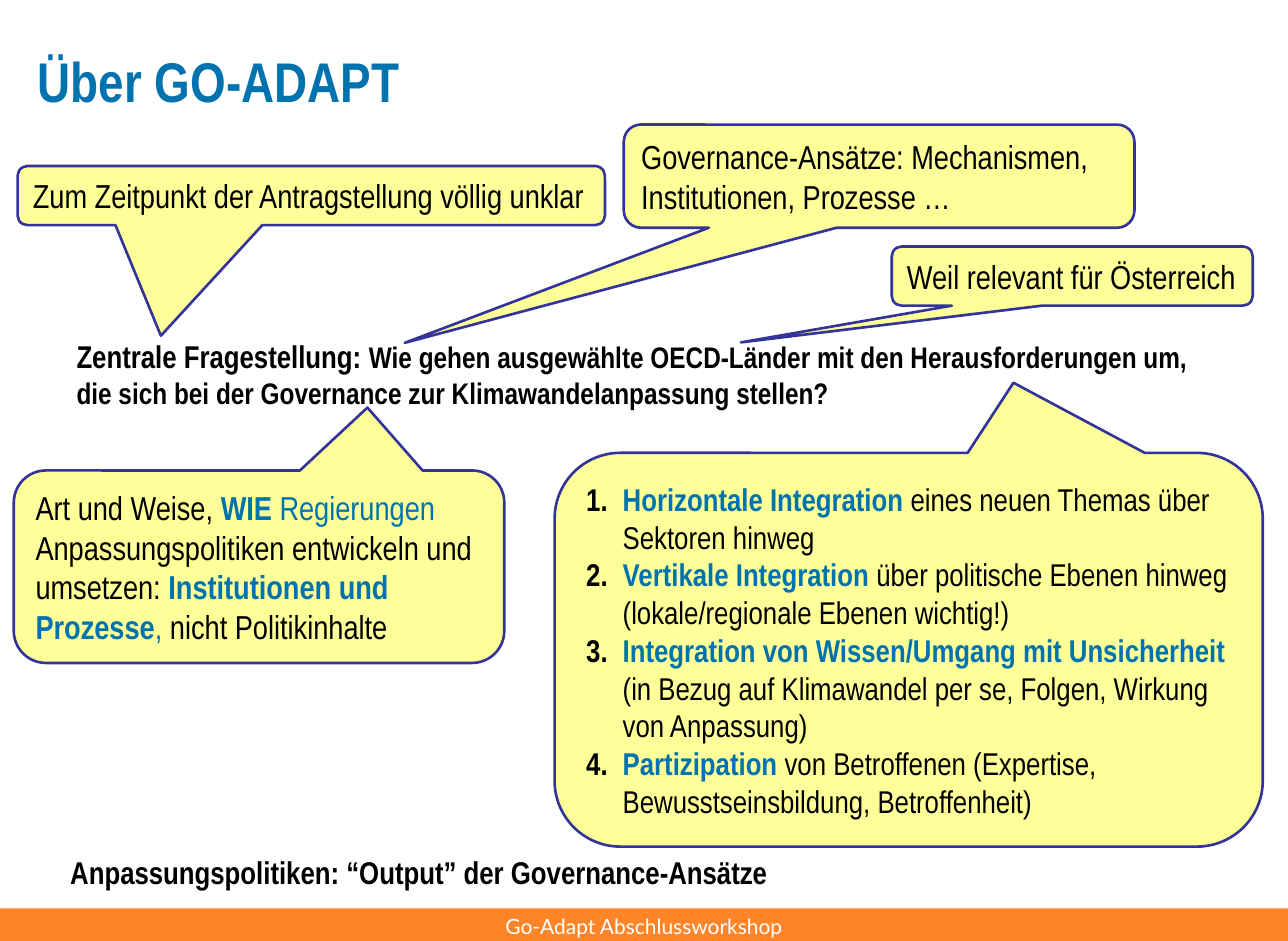
import lxml.etree
import pptx
import pptx.dml.color
import pptx.enum.shapes
import pptx.enum.text
import pptx.oxml.ns
import pptx.util

Inches = pptx.util.Inches
RGBColor = pptx.dml.color.RGBColor
SHAPE = pptx.enum.shapes.MSO_SHAPE
ALIGN = pptx.enum.text.PP_ALIGN
ANCHOR = pptx.enum.text.MSO_ANCHOR

BLUE = RGBColor(0x00, 0x73, 0xAF)
ORANGE = RGBColor(0xFF, 0x85, 0x28)
YELLOW = RGBColor(0xFF, 0xFF, 0x99)
INDIGO = RGBColor(0x33, 0x33, 0x99)
BLACK = RGBColor(0, 0, 0)
WHITE = RGBColor(0xFF, 0xFF, 0xFF)
NARROW = "Arial Narrow"

PLAIN = (BLACK, False)
STRONG = (BLUE, True)
ACCENT = (BLUE, False)

CALLOUTS = [
    ((0.14, 1.32, 4.67, 0.47), (-0.256, 2.37), False,
     [("Zum Zeitpunkt der Antragstellung völlig unklar", PLAIN)]),
    ((0.11, 3.74, 3.9, 1.53), (0.221, -0.827), True,
     [("Art und Weise, ", PLAIN), ("WIE ", STRONG), ("Regierungen ", ACCENT),
      ("Anpassungspolitiken entwickeln und umsetzen: ", PLAIN),
      ("Institutionen und Prozesse", STRONG), (", ", ACCENT),
      ("nicht Politikinhalte", PLAIN)]),
    ((7.09, 1.96, 2.87, 0.47), (-0.918, 1.122), False,
     [("Weil relevant für Österreich", PLAIN)]),
    ((4.96, 0.99, 4.06, 0.82), (-0.929, 1.616), True,
     [("Governance-Ansätze: Mechanismen, Institutionen, Prozesse …", PLAIN)]),
]

CHALLENGES = [
    ("Horizontale Integration ", "eines neuen Themas über Sektoren hinweg"),
    ("Vertikale Integration ",
     "über politische Ebenen hinweg (lokale/regionale Ebenen wichtig!)"),
    ("Integration von Wissen/Umgang mit Unsicherheit ",
     "(in Bezug auf Klimawandel per se, Folgen, Wirkung von Anpassung)"),
    ("Partizipation ", "von Betroffenen (Expertise, Bewusstseinsbildung, Betroffenheit)"),
]


def set_font(font, size, color=None, bold=None, name=NARROW):
    """Set the typeface, size, colour and weight of a font."""
    font.name = name
    font.size = pptx.util.Pt(size)
    if color is not None:
        font.color.rgb = color
    if bold is not None:
        font.bold = bold


def add_runs(paragraph, pieces, size):
    """Fill a left-aligned paragraph with runs of differing colour and weight."""
    paragraph.alignment = ALIGN.LEFT
    set_font(paragraph.font, size)
    for text, (color, bold) in pieces:
        run = paragraph.add_run()
        run.text = text
        run.font.color.rgb = color
        run.font.bold = bold


def number_paragraph(paragraph):
    """Give a paragraph a hanging automatic number."""
    properties = paragraph._p.get_or_add_pPr()
    indent = Inches(0.29)
    properties.set("marL", str(indent))
    properties.set("indent", str(-indent))
    color = lxml.etree.SubElement(properties, pptx.oxml.ns.qn("a:buClr"))
    lxml.etree.SubElement(color, pptx.oxml.ns.qn("a:srgbClr"), val=str(BLACK))
    lxml.etree.SubElement(properties, pptx.oxml.ns.qn("a:buAutoNum"), type="arabicPeriod")


def add_title(slide, box):
    """Place the slide title in its box."""
    title = slide.shapes.title
    title.left, title.top, title.width, title.height = map(Inches, box)
    title.text_frame.text = "Über GO-ADAPT"
    title.text_frame.vertical_anchor = ANCHOR.MIDDLE
    heading = title.text_frame.paragraphs[0]
    heading.alignment = ALIGN.LEFT
    set_font(heading.font, 32, BLUE, True)


def add_callout(slide, box, tip, wrap=True):
    """Draw a yellow callout pointing at tip and return its text frame."""
    callout = slide.shapes.add_shape(SHAPE.ROUNDED_RECTANGULAR_CALLOUT, *map(Inches, box))
    callout.shadow.inherit = False
    callout.adjustments[0], callout.adjustments[1] = tip
    callout.adjustments[2] = 0.167
    callout.fill.solid()
    callout.fill.fore_color.rgb = YELLOW
    callout.line.color.rgb = INDIGO
    callout.line.width = pptx.util.Pt(1.5)
    callout.text_frame.word_wrap = wrap
    callout.text_frame.vertical_anchor = ANCHOR.MIDDLE
    return callout.text_frame


def add_challenges(slide, box):
    """Place the callout with the numbered governance challenges."""
    frame = add_callout(slide, box, (0.148, -0.678))
    for index, (topic, detail) in enumerate(CHALLENGES):
        paragraph = frame.add_paragraph() if index else frame.paragraphs[0]
        number_paragraph(paragraph)
        add_runs(paragraph, [(topic, STRONG), (detail, PLAIN)], 18)


def add_statement(slide, box, pieces):
    """Place a bold black statement made of (text, size) pieces."""
    frame = slide.shapes.add_textbox(*map(Inches, box)).text_frame
    frame.word_wrap = True
    paragraph = frame.paragraphs[0]
    paragraph.font.name = NARROW
    paragraph.font.bold = True
    paragraph.font.color.rgb = BLACK
    for text, size in pieces:
        run = paragraph.add_run()
        run.text = text
        run.font.size = pptx.util.Pt(size)


def add_footer(slide, box):
    """Draw the orange footer band with the event name."""
    band = slide.shapes.add_shape(SHAPE.RECTANGLE, *map(Inches, box))
    band.shadow.inherit = False
    band.fill.solid()
    band.fill.fore_color.rgb = ORANGE
    band.line.fill.background()
    frame = band.text_frame
    frame.margin_top = frame.margin_bottom = 0
    frame.vertical_anchor = ANCHOR.MIDDLE
    frame.text = "Go-Adapt Abschlussworkshop"
    event = frame.paragraphs[0]
    event.alignment = ALIGN.CENTER
    set_font(event.font, 12, WHITE, name="Lato")


def main():
    """Build and save the slide."""
    deck = pptx.Presentation()
    deck.slide_width, deck.slide_height = Inches(10.24), Inches(7.48)
    slide = deck.slides.add_slide(deck.slide_layouts[5])
    add_footer(slide, (0, 7.22, 10.24, 0.28))
    add_title(slide, (0.2, 0.12, 9.21, 1.03))
    add_statement(slide, (0.51, 2.63, 9.25, 0.68), [
        ("Zentrale Fragestellung: ", 18),
        ("Wie gehen ausgewählte OECD-Länder mit den Herausforderungen um, "
         "die sich bei der Governance zur Klimawandelanpassung stellen?", 17)])
    add_challenges(slide, (4.41, 3.6, 5.63, 3.13))
    for box, tip, wrap, pieces in CALLOUTS:
        frame = add_callout(slide, box, tip, wrap)
        add_runs(frame.paragraphs[0], pieces, 19)
    add_statement(slide, (0.46, 6.73, 8.71, 0.4),
                  [("Anpassungspolitiken: “Output” der Governance-Ansätze", 18)])
    deck.save("out.pptx")


if __name__ == "__main__":
    main()
